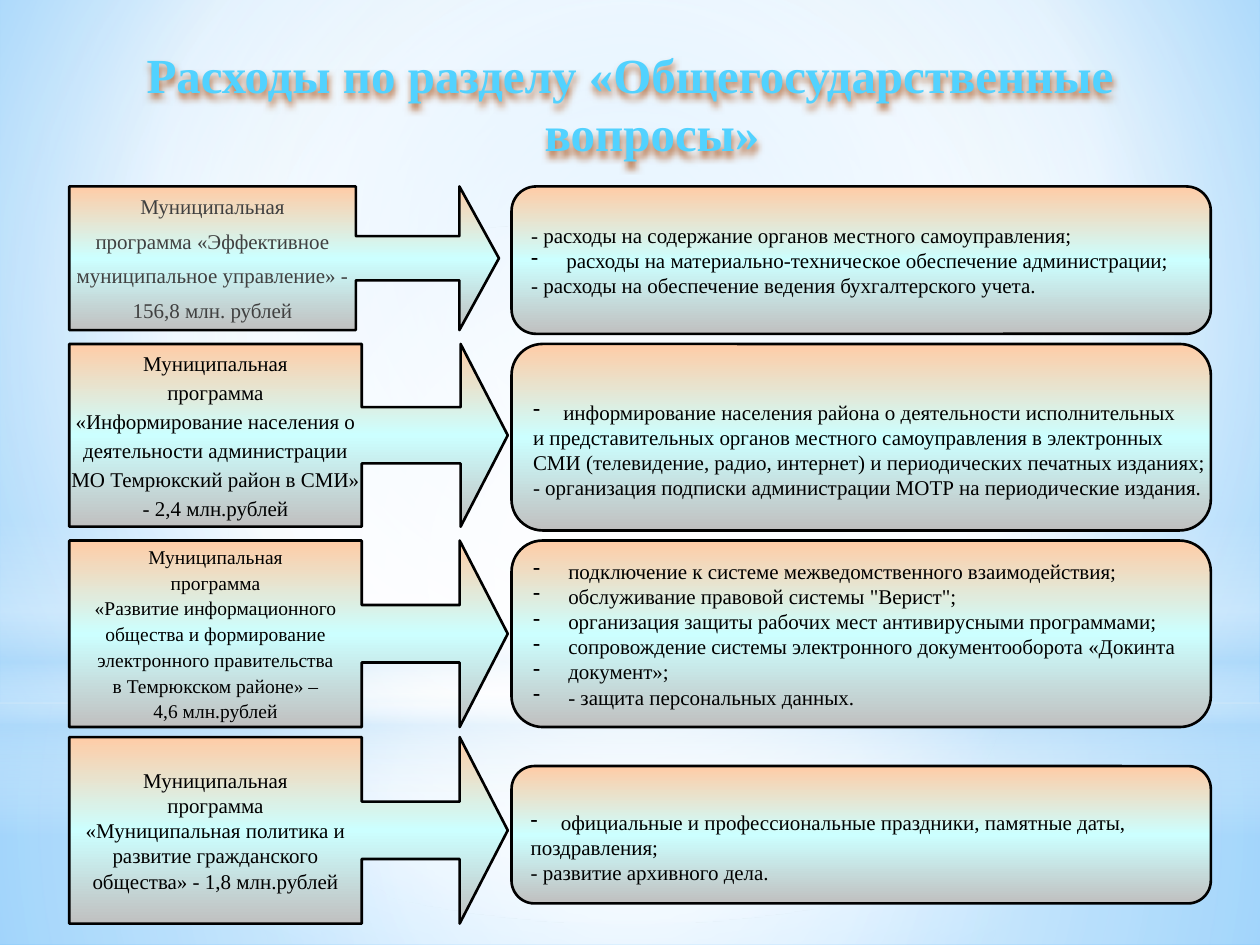
"""Builds the slide on spending for general state matters."""
from lxml.etree import SubElement
from pptx import Presentation
from pptx.dml.color import RGBColor
from pptx.enum.shapes import MSO_SHAPE
from pptx.enum.text import MSO_ANCHOR, MSO_AUTO_SIZE, PP_ALIGN
from pptx.oxml.ns import qn
from pptx.util import Inches, Pt

THEME = {
    "font": "Times New Roman", "title": "52D2FF", "glow": "B87040",
    "ink": "000000", "grey": "404040", "head": 28, "text": 12, "small": 11.1,
    "card": [(0, "FFCCA6", 100), (50, "CCFFFF", 100), (100, "C0C0C0", 100)],
    "back": [(0, "9ED5FF", 100), (60, "FFFFFF", 100), (100, "5BB9FF", 100)],
    "low": [(0, "FFFFFF", 91), (37, "FFFFFF", 76), (100, "B4DCFA", 79)],
    "high": [(0, "FFFFFF", 89), (48, "FFFFFF", 62), (100, "B4DCFA", 79)],
    "band": [(0, "FFFFFF", 0), (29, "FFFFFF", 30), (45, "B4DCFA", 40),
             (55, "FFFFFF", 26), (65, "B4DCFA", 60), (100, "FFFFFF", 0)],
    "glare": [(0, "FFFFFF", 100), (56, "FFFFFF", 0)],
}
LEFT, RIGHT, WIDE = 0.55, 4.06, 5.55
TOP, GAP = 1.48, 0.08
CENTRE = (50, 50, 50, 50)


def put(item, **values):
    """Sets each named value on the item."""
    for name, value in values.items():
        setattr(item, name, value)


def paint(fill, host, stops, focus=None):
    """Gives the fill a gradient, round if it has a focus, else downward."""
    fill.gradient()
    grad = host.find(".//" + qn("a:gradFill"))
    for part in list(grad):
        grad.remove(part)
    row = SubElement(grad, qn("a:gsLst"))
    for place, tone, alpha in stops:
        stop = SubElement(row, qn("a:gs"), pos=str(place * 1000))
        clr = SubElement(stop, qn("a:srgbClr"), val=tone)
        if alpha < 100:
            SubElement(clr, qn("a:alpha"), val=str(alpha * 1000))
    if focus:
        way = SubElement(grad, qn("a:path"), path="circle")
        sides = {side: str(n * 1000) for side, n in zip("ltrb", focus)}
        SubElement(way, qn("a:fillToRect"), **sides)
    else:
        SubElement(grad, qn("a:lin"), ang="5400000", scaled="0")


deck = Presentation()
put(deck, slide_width=Inches(10), slide_height=Inches(7.5))
slide = deck.slides.add_slide(deck.slide_layouts[1])
shapes = slide.shapes
title, body = slide.placeholders
paint(slide.background.fill, slide.element, THEME["back"], (20, 10, 20, 60))

decor = [
    (MSO_SHAPE.RECTANGLE, 0.744, 0.256, "low", CENTRE),
    (MSO_SHAPE.RECTANGLE, 0, 0.744, "high", CENTRE),
    (MSO_SHAPE.RECTANGLE, 0.55, 0.333, "band", None),
    (MSO_SHAPE.OVAL, 0.233, 0.744, "glare", CENTRE),
]
for kind, top, tall, key, focus in decor:
    veil = shapes.add_shape(kind, 0, int(top * deck.slide_height),
                            deck.slide_width, int(tall * deck.slide_height))
    paint(veil.fill, veil.element, THEME[key], focus)
    veil.line.fill.background()
    veil.shadow.inherit = False

shapes.element.append(title.element)
put(title, left=Inches(0.5), top=Inches(0.3), width=Inches(9), height=Inches(0.95))
frame = title.text_frame
frame.text = "Расходы по разделу «Общегосударственные вопросы»"
put(frame, vertical_anchor=MSO_ANCHOR.TOP, auto_size=MSO_AUTO_SIZE.NONE, word_wrap=True)
para = frame.paragraphs[0]
para.alignment = PP_ALIGN.CENTER
for name, size in {"marL": 0.35, "indent": -0.35}.items():
    para._p.get_or_add_pPr().set(name, str(Inches(size)))
font = para.runs[0].font
put(font, name=THEME["font"], size=Pt(THEME["head"]), bold=True)
font.color.rgb = RGBColor.from_string(THEME["title"])
glow = SubElement(SubElement(title.element.spPr, qn("a:effectLst")), qn("a:outerShdw"),
                  blurRad="50800", dist="38100", dir="5400000", algn="t", rotWithShape="0")
SubElement(glow, qn("a:srgbClr"), val=THEME["glow"])

rows = [
    {"tall": 1.17, "arrow": (3.41, 1.14, 0.275), "card": (0, 1.17), "push": 0,
     "size": "text", "ink": "grey", "space": 5.3, "dent": 0.28,
     "name": ["Муниципальная", "программа «Эффективное", "муниципальное управление» -",
              "156,8 млн. рублей"],
     "list": ["- расходы на содержание органов местного самоуправления;",
              "*расходы на материально-техническое обеспечение администрации;",
              "- расходы на обеспечение ведения бухгалтерского учета."]},
    {"tall": 1.48, "arrow": (3.48, 1.45, 0.258), "card": (0, 1.48), "push": 0.2,
     "size": "text", "ink": "ink", "space": 2.2, "dent": 0.24,
     "name": ["Муниципальная", "программа", "«Информирование населения о",
              "деятельности администрации", "МО Темрюкский район в СМИ»",
              "- 2,4 млн.рублей"],
     "list": ["*информирование населения района о деятельности исполнительных",
              "и представительных органов местного самоуправления в электронных",
              "СМИ (телевидение, радио, интернет) и периодических печатных изданиях;",
              "- организация подписки администрации МОТР на периодические издания."]},
    {"tall": 1.48, "arrow": (3.48, 1.48, 0.258), "card": (0, 1.48), "push": 0,
     "size": "small", "ink": "ink", "space": 1.4, "dent": 0.28,
     "name": ["Муниципальная", "программа", "«Развитие информационного",
              "общества и формирование", "электронного правительства",
              "в Темрюкском районе» –", "4,6 млн.рублей"],
     "list": ["*подключение к системе межведомственного взаимодействия;",
              "*обслуживание правовой системы \"Верист\";",
              "*организация защиты рабочих мест антивирусными программами;",
              "*сопровождение системы электронного документооборота «Докинта",
              "*документ»;", "*- защита персональных данных."]},
    {"tall": 1.48, "arrow": (3.48, 1.48, 0.258), "card": (0.23, 1.09), "push": 0.2,
     "size": "text", "ink": "ink", "space": 0, "dent": 0.24,
     "name": ["Муниципальная", "программа", "«Муниципальная политика и",
              "развитие гражданского", "общества» - 1,8 млн.рублей"],
     "list": ["*официальные и профессиональные праздники, памятные даты,",
              "поздравления;", "- развитие архивного дела."]},
]
top = TOP
for row in rows:
    wide, tall, tip = row["arrow"]
    drop, high = row["card"]
    spot = [Inches(n) for n in (LEFT, top, wide, tall)]
    if row is rows[0]:
        arrow = body
        shapes.element.append(body.element)
        put(body, **dict(zip(("left", "top", "width", "height"), spot)))
        geom = SubElement(body.element.spPr, qn("a:prstGeom"), prst="rightArrowCallout")
        guides = SubElement(geom, qn("a:avLst"))
        for n, share in enumerate((0.308, 0.616, tip, 0.667), 1):
            SubElement(guides, qn("a:gd"), name=f"adj{n}", fmla=f"val {round(share * 100000)}")
    else:
        arrow = shapes.add_shape(MSO_SHAPE.RIGHT_ARROW_CALLOUT, *spot)
        for n, share in enumerate((0.308, 0.616, tip, 0.667)):
            arrow.adjustments[n] = share
        arrow.shadow.inherit = False
    card = shapes.add_shape(MSO_SHAPE.ROUNDED_RECTANGLE, Inches(RIGHT), Inches(top + drop),
                            Inches(WIDE), Inches(high))
    card.shadow.inherit = False
    boxes = [
        (arrow, row["name"], PP_ALIGN.CENTER, row["size"], row["ink"], row["space"], 0),
        (card, row["list"], PP_ALIGN.LEFT, "text", "ink", 0, row["push"]),
    ]
    for box, lines, align, size, ink, space, push in boxes:
        paint(box.fill, box.element, THEME["card"])
        box.line.width = Pt(1.5)
        box.line.color.rgb = RGBColor.from_string(THEME["ink"])
        frame = box.text_frame
        frame.text = "\n".join(line.lstrip("*") for line in lines)
        put(frame, word_wrap=False, auto_size=MSO_AUTO_SIZE.NONE,
            vertical_anchor=MSO_ANCHOR.MIDDLE,
            margin_top=Inches(0.03 + push), margin_bottom=Inches(0.03))
        for n, (para, line) in enumerate(zip(frame.paragraphs, lines)):
            mark = line.startswith("*")
            dent = Inches(row["dent"]) if mark else 0
            put(para, alignment=align, space_before=Pt(space if n else 0), space_after=Pt(0))
            props = para._p.get_or_add_pPr()
            props.set("marL", str(dent))
            props.set("indent", str(-dent))
            if mark:
                SubElement(props, qn("a:buChar"), char="-")
            else:
                SubElement(props, qn("a:buNone"))
            put(para.runs[0].font, name=THEME["font"], size=Pt(THEME[size]))
            para.runs[0].font.color.rgb = RGBColor.from_string(THEME[ink])
    top += row["tall"] + GAP

deck.save("out.pptx")
